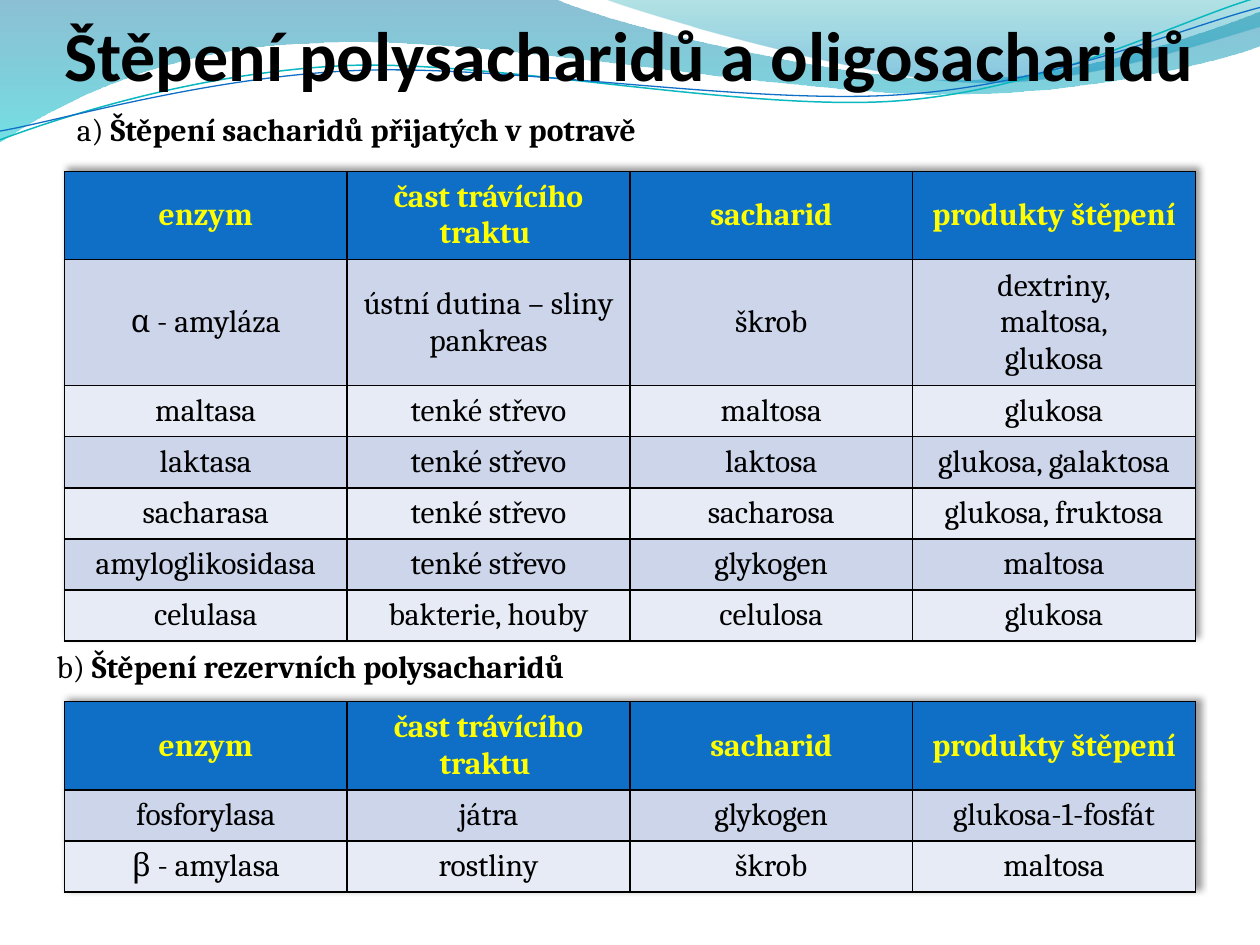
from dataclasses import dataclass
from math import cos, radians, sin

from lxml.etree import SubElement as Sub
from pptx import Presentation
from pptx.dml.color import RGBColor as RGB
from pptx.enum.text import (MSO_ANCHOR as Anchor, MSO_AUTO_SIZE as Fit,
                            PP_ALIGN as Align)
from pptx.oxml import parse_xml
from pptx.oxml.ns import nsdecls, qn
from pptx.util import Pt


@dataclass
class Theme:
    head: str = "0F6FC6"
    label: str = "FFFF00"
    ink: str = "000000"
    bands: tuple = ("CCD5EA", "E7EBF5")
    teal: str = "0AB8BF"
    title: float = 40
    body: float = 18
    sans: str = "Calibri"
    serif: str = "Cambria"


def turn(pts, mid, angle):
    """Turn points clockwise about mid."""
    c, s = cos(radians(angle)), sin(radians(angle))
    mx, my = mid
    return [(mx + (x - mx) * c - (y - my) * s,
             my + (x - mx) * s + (y - my) * c) for x, y in pts]


class Deck:
    def __init__(self, theme):
        self.theme = theme
        self.prs = Presentation()
        self.prs.slide_width, self.prs.slide_height = Pt(720), Pt(540)
        self.slide = self.prs.slides.add_slide(self.prs.slide_layouts[6])
        self.shapes = self.slide.shapes

    def outline(self, start, parts, close, mid=(0, 0), tilt=0):
        """Parts are lines (x, y) or cubic curves (two handles, end)."""
        pts = [start] + [p[i:i + 2] for p in parts
                         for i in range(0, len(p), 2)]
        (x, y), *rest = turn(pts, mid, -tilt)
        pen = self.shapes.build_freeform(Pt(x), Pt(y))
        pen.add_line_segments([(Pt(x), Pt(y)) for x, y in rest], close=close)
        shape = pen.convert_to_shape()
        shape.shadow.inherit = False
        shape.rotation = tilt % 360
        # Join each curve's three points into one cubic segment
        lines = shape._element.spPr.iter(qn("a:lnTo"))
        steps = iter(list(lines))
        for part in parts:
            step = next(steps)
            if len(part) == 6:
                step.tag_name = None
                cubic = parse_xml(f'<a:cubicBezTo {nsdecls("a")}/>')
                step.addprevious(cubic)
                for node in (step, next(steps), next(steps)):
                    cubic.append(node[0])
                    node.getparent().remove(node)
        return shape

    def wave(self, start, parts, stops):
        shape = self.outline(start, parts, True)
        shape.line.fill.background()
        fill = shape.fill
        fill.gradient()
        fill.gradient_angle = 270
        for stop, (pos, color, _) in zip(fill.gradient_stops, stops):
            stop.position = pos
            stop.color.rgb = RGB.from_string(color)
        marks = shape._element.spPr.iter(qn("a:srgbClr"))
        for mark, (_, _, alpha) in zip(marks, stops):
            Sub(mark, qn("a:alpha"), val=str(alpha * 1000))

    def curve(self, start, parts, mid, color, width):
        shape = self.outline(start, parts, False, mid, -2.7)
        shape.fill.background()
        shape.line.color.rgb = RGB.from_string(color)
        shape.line.width = Pt(width)

    def run(self, para, text, size, font, color, bold=False):
        run = para.add_run()
        run.text = text
        run.font.size, run.font.name, run.font.bold = Pt(size), font, bold
        run.font.color.rgb = RGB.from_string(color)

    def text(self, x, y, w, h, wrap):
        frame = self.shapes.add_textbox(Pt(x), Pt(y), Pt(w), Pt(h)).text_frame
        frame.word_wrap = wrap
        return frame

    def title(self, text, x, y, w, h):
        t = self.theme
        frame = self.text(x, y, w, h, True)
        frame.margin_left = frame.margin_right = frame.margin_bottom = 0
        frame.vertical_anchor = Anchor.BOTTOM
        self.run(frame.paragraphs[0], text, t.title, t.sans, t.ink, True)

    def caption(self, mark, text, x, y, w):
        t = self.theme
        frame = self.text(x, y, w, 29, False)
        frame.auto_size = Fit.SHAPE_TO_FIT_TEXT
        para = frame.paragraphs[0]
        self.run(para, mark, t.body, t.serif, t.ink)
        self.run(para, text, t.body, t.serif, t.ink, True)

    def table(self, rows, x, y, w, h, line=29.2):
        t = self.theme
        cols = len(rows[0])
        frame = self.shapes.add_table(len(rows), cols, Pt(x), Pt(y),
                                      Pt(w), Pt(h))
        table = frame.table
        table.first_row = table.horz_banding = False
        table._tbl.tblPr.insert(0, parse_xml(
            f'<a:effectLst {nsdecls("a")}><a:outerShdw blurRad="50800" '
            'dist="38100" dir="18900000" algn="bl" rotWithShape="0">'
            '<a:prstClr val="black"><a:alpha val="40000"/></a:prstClr>'
            '</a:outerShdw></a:effectLst>'))
        for col in table.columns:
            col.width = Pt(w / cols)
        for r, row in enumerate(rows):
            table.rows[r].height = Pt(line)
            fill = t.bands[(r - 1) % 2] if r else t.head
            for c, text in enumerate(row):
                self.cell(table.cell(r, c), text, fill, r == 0)
        frame.height = Pt(h)

    def cell(self, cell, text, fill, head):
        t = self.theme
        cell.vertical_anchor = Anchor.MIDDLE
        cell.fill.solid()
        cell.fill.fore_color.rgb = RGB.from_string(fill)
        frame = cell.text_frame
        for i, line in enumerate(text.split("\n")):
            para = frame.add_paragraph() if i else frame.paragraphs[0]
            para.alignment = Align.CENTER
            self.run(para, line, t.body, t.serif,
                     t.label if head else t.ink, head)
        for i, side in enumerate("LRTB"):
            cell._tc.tcPr.insert(i, parse_xml(
                f'<a:ln{side} {nsdecls("a")} w="{Pt(1)}"><a:solidFill>'
                f'<a:srgbClr val="{t.ink}"/></a:solidFill></a:ln{side}>'))


def main():
    theme = Theme()
    deck = Deck(theme)

    # Waves behind the title
    deck.wave((0, 0), [
        (317, -0.7),
        (342.7, 12.2, 478.1, 45.4, 545.8, 45.4),
        (614.2, 45.4, 689.8, 18.7, 720, 6.5),
        (720.7, 25.9),
        (707.8, 31.7, 626.4, 54.7, 537.1, 54),
        (447.8, 54, 275, 20.2, 185, 24.5),
        (92.9, 25.9, 33.1, 59.8, -0.7, 81.4),
    ], [(0, "0074A1", 45), (1, "00C6CF", 55)])
    deck.wave((344.9, -0.7), [
        (366.5, 7.9, 491, 44.6, 553.7, 46.8),
        (616.3, 49.7, 691.9, 23, 720, 15.1),
        (720, 0),
    ], [(0, "00A1A9", 30), (0.8, "008BBF", 45)])
    deck.curve((0, 79.9), [
        (34.6, 67, 113.8, 41, 199.4, 37.4),
        (284.4, 34.6, 427, 64.1, 513.4, 57.6),
        (599.8, 51.1, 675.4, 10.8, 718.6, -1.4),
    ], (359.3, 41.4), theme.teal, 0.85)
    deck.curve((0, 74.9), [
        (33.8, 69.1, 118.1, 43.9, 203.8, 40.3),
        (290.2, 36.7, 429.8, 60.5, 516.2, 54),
        (601.9, 48.2, 677.5, 15.1, 720, 4.3),
    ], (359.6, 42.5), theme.head, 0.75)

    deck.title("Štěpení polysacharidů a oligosacharidů", 36.8, 3.6, 648, 51)

    # Sugars taken in with food
    left, wide = 36.8, 646.4
    head = ("enzym", "čast trávícího traktu ", "sacharid", "produkty štěpení")
    gut = "tenké střevo"
    deck.table([
        head,
        ("α - amyláza", "ústní dutina – sliny\npankreas", "škrob",
         "dextriny,\nmaltosa,\nglukosa"),
        ("maltasa", gut, "maltosa", "glukosa"),
        ("laktasa", gut, "laktosa", "glukosa, galaktosa"),
        ("sacharasa", gut, "sacharosa", "glukosa, fruktosa"),
        ("amyloglikosidasa", gut, "glykogen", "maltosa"),
        ("celulasa", "bakterie, houby", "celulosa", "glukosa"),
    ], left, 97.9, wide, 268.6)
    deck.caption("a) ", "Štěpení sacharidů přijatých v potravě",
                 left, 59.5, 350)

    # Reserve polysaccharides
    deck.table([
        head,
        ("fosforylasa", "játra", "glykogen", "glukosa-1-fosfát"),
        ("β - amylasa", "rostliny", "škrob", "maltosa"),
    ], left, 401, wide, 108.7)
    deck.caption("b) ", "Štěpení rezervních polysacharidů",
                 25.2, 366.2, 326)

    deck.prs.save("out.pptx")


if __name__ == "__main__":
    main()
